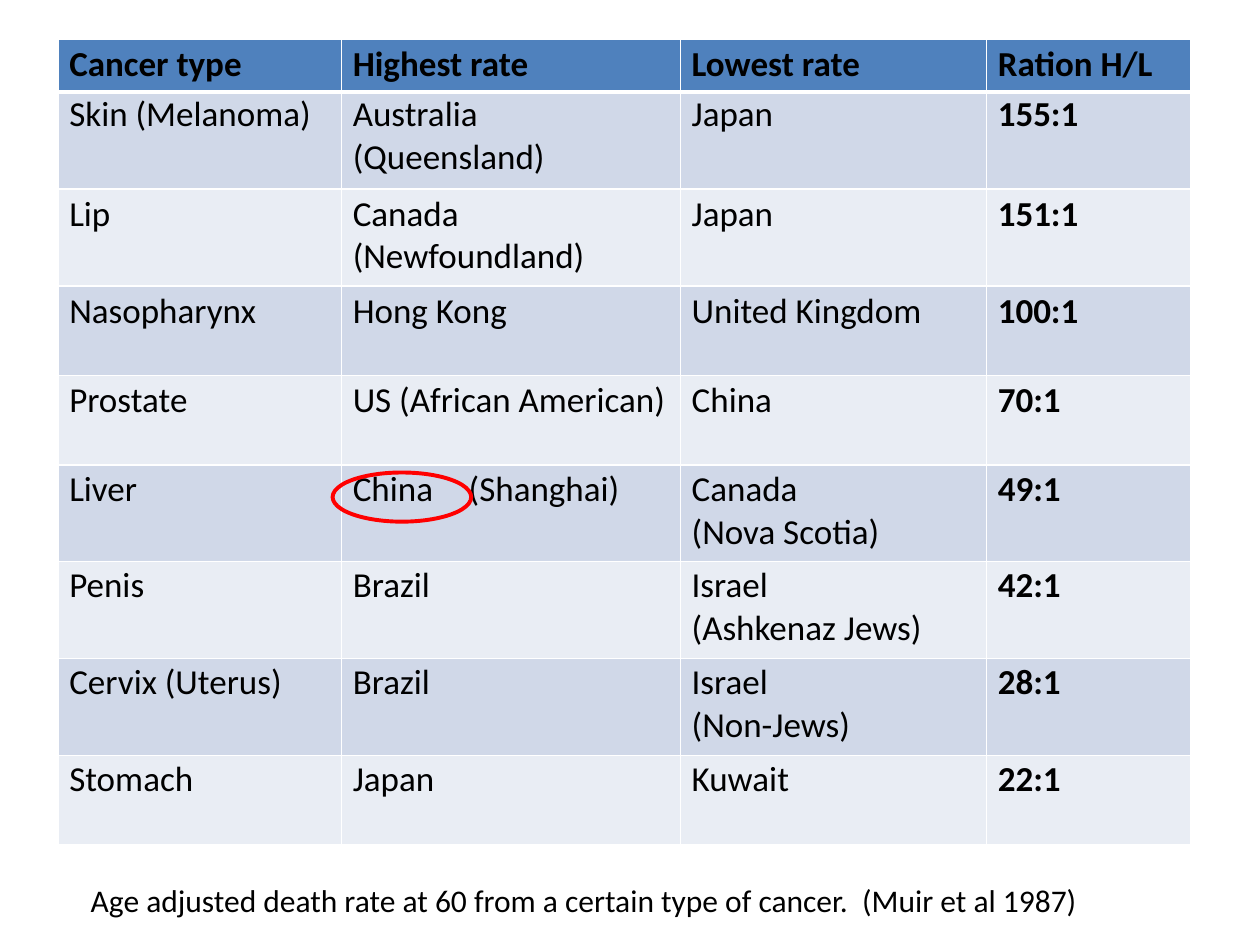
"""Build a slide with a table of cancer death rates by country."""
from lxml import etree
from pptx import Presentation
from pptx.dml.color import RGBColor
from pptx.enum.shapes import MSO_SHAPE
from pptx.oxml.ns import qn
from pptx.util import Inches, Pt

OVAL = MSO_SHAPE.OVAL
BLACK = RGBColor(0x00, 0x00, 0x00)
WHITE = RGBColor(0xFF, 0xFF, 0xFF)
RED = RGBColor(0xFF, 0x00, 0x00)
HEADER_BLUE = RGBColor(0x4F, 0x81, 0xBD)
DARK_BAND = RGBColor(0xD0, 0xD8, 0xE8)
LIGHT_BAND = RGBColor(0xE9, 0xED, 0xF4)
FONT = "Calibri"

RATES = [
    ("Cancer type", "Highest rate", "Lowest rate", "Ration H/L"),
    ("Skin (Melanoma)", "Australia\v(Queensland)", "Japan", "155:1"),
    ("Lip", "Canada\v(Newfoundland)", "Japan", "151:1"),
    ("Nasopharynx", "Hong Kong", "United Kingdom", "100:1"),
    ("Prostate", "US (African American)", "China", "70:1"),
    ("Liver", "China\t(Shanghai)", "Canada\v(Nova Scotia)", "49:1"),
    ("Penis", "Brazil", "Israel\n(Ashkenaz Jews)", "42:1"),
    ("Cervix (Uterus)", "Brazil", "Israel\n(Non-Jews)", "28:1"),
    ("Stomach", "Japan", "Kuwait", "22:1"),
]
COLUMN_WIDTHS = [2.25, 2.69, 2.43, 1.62]
ROW_HEIGHTS = [0.42, 0.77, 0.77, 0.71, 0.71, 0.77, 0.77, 0.77, 0.71]
TOP_INSETS = [0.03, 0.01, 0.03, 0.03, 0.03, 0.03, 0.02, 0.02, 0.02]
REGION_TAB = 0.92
CAPTION = ("Age adjusted death rate at 60 from a certain type of cancer.  "
           "(Muir et al 1987)")


def style_paragraph(paragraph, size, bold=False):
    """Set the font of every run in a paragraph."""
    for run in paragraph.runs:
        run.font.name = FONT
        run.font.size = Pt(size)
        run.font.bold = bold
        run.font.color.rgb = BLACK


def add_tab_stop(paragraph, position):
    """Add a left tab stop to a paragraph."""
    tabs = etree.SubElement(paragraph._p.get_or_add_pPr(), qn("a:tabLst"))
    etree.SubElement(tabs, qn("a:tab"), pos=str(Inches(position)), algn="l")


def add_border(cell, side, width):
    """Draw a white border on one side of a cell."""
    line = etree.SubElement(cell._tc.get_or_add_tcPr(), qn(f"a:ln{side}"),
                            w=str(Pt(width)))
    fill = etree.SubElement(line, qn("a:solidFill"))
    etree.SubElement(fill, qn("a:srgbClr"), val=str(WHITE))


def fill_cell(cell, text, row, bold):
    """Write and style one cell of the rate table."""
    cell.margin_left = Inches(0.09)
    cell.margin_top = Inches(TOP_INSETS[row])
    cell.margin_right = cell.margin_bottom = 0
    cell.text_frame.text = text
    for paragraph in cell.text_frame.paragraphs:
        if "\t" in text:
            add_tab_stop(paragraph, REGION_TAB)
        style_paragraph(paragraph, 20, bold)
    header_edges = {0: "B", 1: "T"}
    for side in "LRTB":
        add_border(cell, side, 3 if header_edges.get(row) == side else 1)
    cell.fill.solid()
    band = DARK_BAND if row % 2 else LIGHT_BAND
    cell.fill.fore_color.rgb = band if row else HEADER_BLUE


def add_rate_table(slide):
    """Add the table of highest and lowest rates."""
    table = slide.shapes.add_table(
        len(RATES), len(COLUMN_WIDTHS), Inches(0.46), Inches(0.31),
        Inches(sum(COLUMN_WIDTHS)), Inches(sum(ROW_HEIGHTS))).table
    table.first_row = table.horz_banding = False
    for column, width in zip(table.columns, COLUMN_WIDTHS):
        column.width = Inches(width)
    ratio_column = len(COLUMN_WIDTHS) - 1
    for row, (height, texts) in enumerate(zip(ROW_HEIGHTS, RATES)):
        table.rows[row].height = Inches(height)
        for column, text in enumerate(texts):
            bold = row == 0 or column == ratio_column
            fill_cell(table.cell(row, column), text, row, bold)


def add_caption(slide):
    """Add the caption below the table."""
    caption = slide.shapes.add_textbox(
        Inches(0.72), Inches(6.99), Inches(7.88), Inches(0.33))
    frame = caption.text_frame
    frame.margin_left = frame.margin_right = 0
    frame.margin_top = frame.margin_bottom = 0
    frame.word_wrap = False
    frame.text = CAPTION
    style_paragraph(frame.paragraphs[0], 18)


def add_highlight(slide):
    """Circle the highest liver cancer rate."""
    ring = slide.shapes.add_shape(
        OVAL, Inches(2.64), Inches(3.75), Inches(1.1), Inches(0.39))
    ring.shadow.inherit = False
    ring.fill.background()
    ring.line.color.rgb = RED
    ring.line.width = Pt(2.25)


def main():
    """Build and save the slide."""
    presentation = Presentation()
    presentation.slide_width = Inches(10)
    presentation.slide_height = Inches(7.5)
    slide = presentation.slides.add_slide(presentation.slide_layouts[6])
    add_rate_table(slide)
    add_caption(slide)
    add_highlight(slide)
    presentation.save("out.pptx")


if __name__ == "__main__":
    main()
